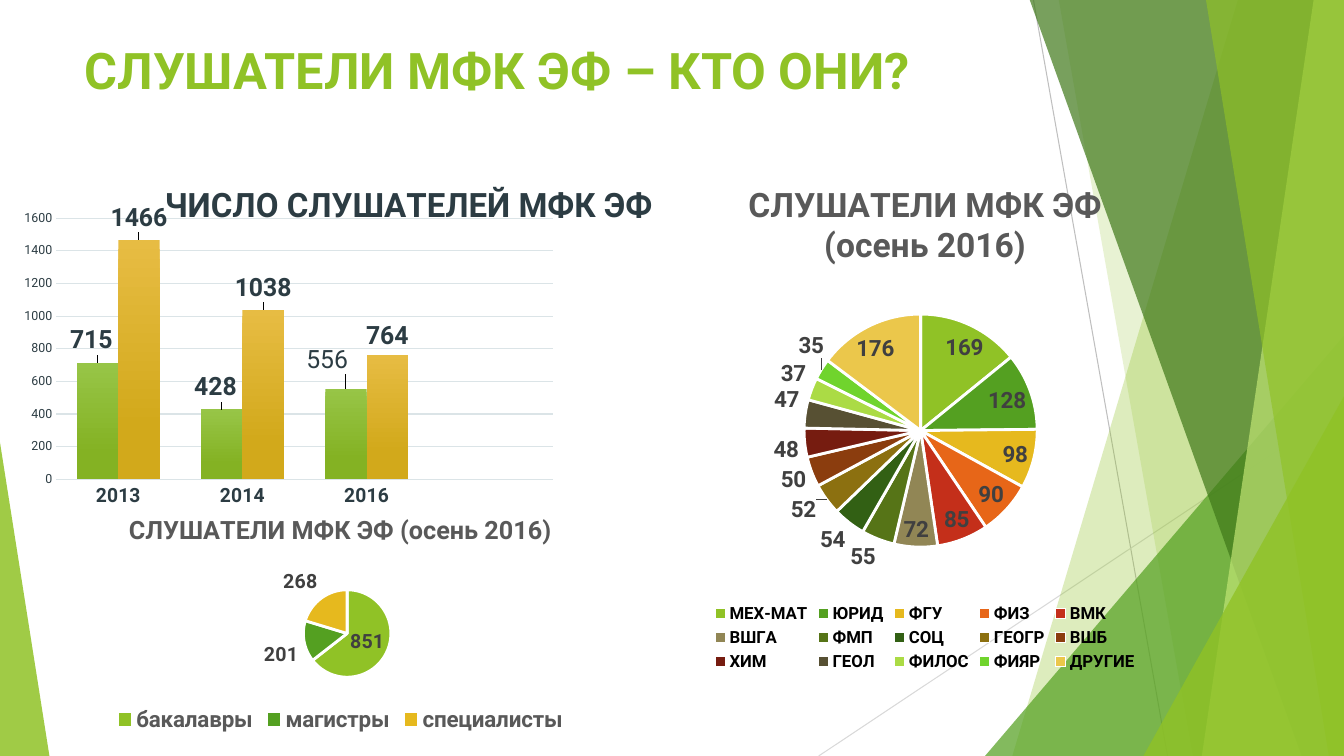
from pptx import Presentation
from pptx.chart.data import CategoryChartData
from pptx.dml.color import RGBColor
from pptx.enum.chart import XL_CHART_TYPE, XL_LABEL_POSITION, XL_LEGEND_POSITION, XL_TICK_MARK
from pptx.enum.shapes import MSO_CONNECTOR, MSO_SHAPE
from pptx.oxml import parse_xml
from pptx.oxml.ns import nsdecls, qn
from pptx.util import Inches, Pt

COLUMN, PIE = XL_CHART_TYPE.COLUMN_CLUSTERED, XL_CHART_TYPE.PIE
OUTSIDE, BEST_FIT = XL_LABEL_POSITION.OUTSIDE_END, XL_LABEL_POSITION.BEST_FIT
BOTTOM, NO_TICK = XL_LEGEND_POSITION.BOTTOM, XL_TICK_MARK.NONE
STRAIGHT, TRIANGLE = MSO_CONNECTOR.STRAIGHT, MSO_SHAPE.ISOSCELES_TRIANGLE

FONT = "Roboto"
COLORS = {
    "lime": "90C226", "green": "54A021", "forest": "3F7819", "pale": "C0E474",
    "slate": "2C3C43", "grid": "DBE4E7", "gray": "595959", "dark": "404040",
    "black": "000000", "white": "FFFFFF", "line1": "BFBFBF", "line2": "D9D9D9",
}
SLICES = ["90C226", "54A021", "E6B91E", "E76618", "C42F1A", "918655", "567417", "326014",
          "8C7010", "8B3D0E", "761C10", "575033", "ABDB45", "70D42D", "EBC74B"]

TITLE = "СЛУШАТЕЛИ МФК ЭФ – КТО ОНИ?"
LINES = [((10.25, 0), (11.58, 7.5), "line1"), ((13.33, 4.03), (8.12, 7.5), "line2")]
TOP, RIGHT, FOOT = -0.01, 13.33, 7.5
DECOR = [
    ("band", (12.28, 10.04), "lime", 30),
    ("band", (10.5, 11.83), "lime", 20),
    ("triangle", (9.77, 3.33, 1), "green", 72),
    ("band", (10.21, 12.91), "forest", 70),
    ("band", (13.03, 11.92), "pale", 70),
    ("band", (11.96, 13.18), "lime", 65),
    ("triangle", (11.34, 3.93, 1), "lime", 80),
    ("triangle", (0, 4.39, 0), "lime", 85),
]

YEARS = ["2013", "2014", "2016", ""]
BARS = [
    ("Series 1", [715, 428, 556, None], ("97C547", "84B223")),
    ("Series 2", [1466, 1038, 764, None], ("E7BC43", "D2A91B")),
]
LABEL_SHIFTS = {(0, 0): (-0.01, -0.01), (0, 1): (-0.01, -0.01), (0, 2): (-0.03, -0.03),
                (1, 0): (0, -0.01), (1, 1): (0, -0.01)}
PLAIN_LABEL = (0, 2)

FACULTIES = {"МЕХ-МАТ": 169, "ЮРИД": 128, "ФГУ": 98, "ФИЗ": 90, "ВМК": 85,
             "ВШГА": 72, "ФМП": 55, "СОЦ": 54, "ГЕОГР": 52, "ВШБ": 50,
             "ХИМ": 48, "ГЕОЛ": 47, "ФИЛОС": 37, "ФИЯР": 35, "ДРУГИЕ": 176}
DEGREES = {"бакалавры": 851, "магистры": 201, "специалисты": 268}
PIE_TITLE = "СЛУШАТЕЛИ МФК ЭФ (осень 2016)"
PIES = [
    (FACULTIES, (6.26, 1.59, 5.83, 5.11), 24, 16, 12, "black", None),
    (DEGREES, (0.51, 4.95, 5.73, 2.36), 18, 14, 16, "gray", (0.105, 0.382, 0.814, 0.368)),
]


def rgb(name):
    return RGBColor.from_string(COLORS.get(name, name))


def set_font(font, size, color, bold=True):
    font.name, font.size, font.bold = FONT, Pt(size), bold
    font.color.rgb = rgb(color)


def set_line(line, color, width):
    line.color.rgb = rgb(color)
    line.width = Pt(width)


def set_layout(parent, index, values, inner=False, edge=True):
    for old in parent.findall(qn("c:layout")):
        parent.remove(old)
    parts = '<c:layoutTarget val="inner"/>' if inner else ""
    if edge:
        parts += '<c:xMode val="edge"/><c:yMode val="edge"/>'
    parts += "".join(f'<c:{key} val="{value}"/>' for key, value in zip("xywh", values))
    parent.insert(index, parse_xml(
        f'<c:layout {nsdecls("c")}><c:manualLayout>{parts}</c:manualLayout></c:layout>'))


def add_decor(slide, kind, geometry, color, alpha):
    if kind == "band":
        top_x, foot_x = geometry
        points = [(top_x, TOP), (RIGHT, TOP), (RIGHT, FOOT), (foot_x, FOOT)]
        points = [(Inches(x), Inches(y)) for x, y in points]
        builder = slide.shapes.build_freeform(*points[0])
        builder.add_line_segments(points[1:], close=True)
        sp = builder.convert_to_shape()
    else:
        left, top, apex = geometry
        width = RIGHT - left if apex else 0.49
        sp = slide.shapes.add_shape(
            TRIANGLE, Inches(left), Inches(top), Inches(width), Inches(FOOT - top))
        sp.adjustments[0] = apex
    sp.shadow.inherit = False
    sp.line.fill.background()
    sp.fill.solid()
    sp.fill.fore_color.rgb = rgb(color)
    clr = sp._element.spPr.find(qn("a:solidFill"))[0]
    clr.append(parse_xml(f'<a:alpha {nsdecls("a")} val="{alpha * 1000}"/>'))


def add_chart(slide, kind, box, cats, series, title, size, color):
    data = CategoryChartData()
    data.categories = cats
    for name, values in series:
        data.add_series(name, values)
    chart = slide.shapes.add_chart(kind, *map(Inches, box), data).chart
    chart._chartSpace.find(qn("c:chart")).addnext(parse_xml(
        f'<c:spPr {nsdecls("c", "a")}><a:noFill/><a:ln><a:noFill/></a:ln></c:spPr>'))
    set_font(chart.font, 10, "black", False)
    chart.has_title = True
    tf = chart.chart_title.text_frame
    tf.text = title
    set_font(tf.paragraphs[0].font, size, color)
    return chart


def set_plot_area(chart, values):
    set_layout(chart._chartSpace.find(".//" + qn("c:plotArea")), 0, values, inner=True)


def show_values(labels, size, color, position):
    labels.show_value = True
    labels.position = position
    set_font(labels.font, size, color)


def add_columns(slide):
    chart = add_chart(slide, COLUMN, (0.21, 1.71, 6.32, 3.34), YEARS,
                      [bar[:2] for bar in BARS], "ЧИСЛО СЛУШАТЕЛЕЙ МФК ЭФ", 24, "slate")
    chart.has_legend = False
    set_layout(chart.chart_title._element, 1, (0.22, 0.01))
    set_plot_area(chart, (0.056, 0.136, 0.794, 0.776))
    plot = chart.plots[0]
    plot.gap_width, plot.overlap, plot.vary_by_categories = 100, 0, False
    for axis, size, bold in ((chart.category_axis, 14, True), (chart.value_axis, 9, False)):
        axis.major_tick_mark = axis.minor_tick_mark = NO_TICK
        set_font(axis.tick_labels.font, size, "slate", bold)
    set_line(chart.category_axis.format.line, "grid", 0.75)
    axis = chart.value_axis
    axis.minimum_scale, axis.maximum_scale, axis.major_unit = 0, 1600, 200
    axis.format.line.fill.background()
    set_line(axis.major_gridlines.format.line, "grid", 0.75)
    for series, (_, _, shades) in zip(plot.series, BARS):
        fill = series.format.fill
        fill.gradient()
        fill.gradient_angle = 270
        for stop, shade, position in zip(fill.gradient_stops, shades, (0, 0.78)):
            stop.color.rgb, stop.position = rgb(shade), position
        show_values(series.data_labels, 18, "slate", OUTSIDE)
    for key, shift in LABEL_SHIFTS.items():
        row, col = key
        label = plot.series[row].points[col].data_label
        if key == PLAIN_LABEL:
            label.text_frame.text = str(BARS[row][1][col])
            set_font(label.text_frame.paragraphs[0].font, 18, "slate", False)
        else:
            set_font(label.font, 18, "slate")
        label.position = OUTSIDE
        set_layout(label._dLbl, 1, shift, edge=False)


def add_pie(slide, values, box, title_size, label_size, legend_size, legend_color, area):
    chart = add_chart(slide, PIE, box, list(values), [("Series 1", list(values.values()))],
                      PIE_TITLE, title_size, "gray")
    chart.has_legend = True
    chart.legend.position = BOTTOM
    chart.legend.include_in_layout = False
    set_font(chart.legend.font, legend_size, legend_color)
    if area:
        set_plot_area(chart, area)
    plot = chart.plots[0]
    plot.vary_by_categories = True
    series = plot.series[0]
    for i, color in enumerate(SLICES[:len(values)]):
        fmt = series.points[i].format
        fmt.fill.solid()
        fmt.fill.fore_color.rgb = rgb(color)
        set_line(fmt.line, "white", 2)
    show_values(series.data_labels, label_size, "dark", BEST_FIT)


def main():
    """Build the slide about the students of the course and save it."""
    prs = Presentation()
    prs.slide_width, prs.slide_height = Inches(13.33), Inches(7.5)
    slide = prs.slides.add_slide(prs.slide_layouts[6])
    for start, end, color in LINES:
        line = slide.shapes.add_connector(STRAIGHT, *map(Inches, start + end))
        set_line(line.line, color, 0.75)
        line._element.spPr.append(parse_xml(f'<a:effectLst {nsdecls("a")}/>'))
    for item in DECOR:
        add_decor(slide, *item)
    tf = slide.shapes.add_textbox(*map(Inches, (0.74, 0.34, 9.4, 0.97))).text_frame
    tf.word_wrap = True
    tf.text = TITLE
    set_font(tf.paragraphs[0].font, 36, "lime")
    add_columns(slide)
    for pie in PIES:
        add_pie(slide, *pie)
    prs.save("out.pptx")


if __name__ == "__main__":
    main()
